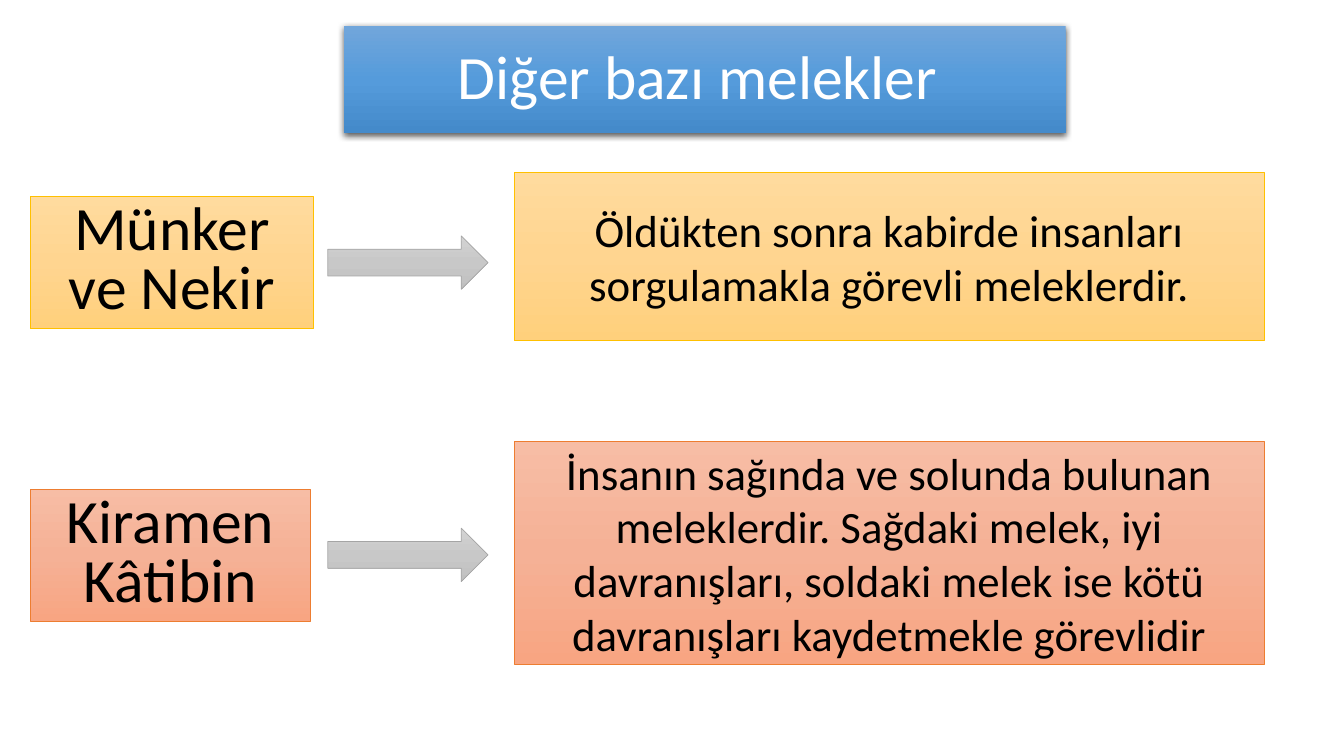
"""Builds a slide that pairs two groups of angels with their duties."""
import dataclasses

import lxml.etree
import pptx
import pptx.dml.color
import pptx.enum.shapes
import pptx.enum.text
import pptx.oxml.ns
import pptx.shapes.autoshape
import pptx.util

SLIDE_WIDTH = pptx.util.Inches(13.33)
SLIDE_HEIGHT = pptx.util.Inches(7.5)
FONT = "Calibri"
COLORS = {
    "black": "000000",
    "white": "FFFFFF",
    "gold line": "FFC000",
    "orange line": "ED7D31",
    "gray line": "A5A5A5",
}
GRADIENTS = {
    "blue": ("71A6DB", "559BDB", "448ACA"),
    "gold": ("FFDB9E", "FFD590", "FFD07C"),
    "orange": ("F7BDA5", "F5B196", "F8A582"),
    "gray": ("D2D2D2", "C8C8C8", "C0C0C0"),
}
NAME_LEFT, NAME_HEIGHT = 2.25, 17.47
ARROW_LEFT, ARROW_WIDTH, ARROW_HEIGHT = 24.38, 11.93, 7.07
DUTY_LEFT, DUTY_WIDTH = 38.26, 55.81


@dataclasses.dataclass(frozen=True)
class Area:
    """Place and size as percentages of the slide."""
    left: float
    top: float
    width: float
    height: float


@dataclasses.dataclass(frozen=True)
class Angel:
    """One row: a name, an arrow and a duty."""
    name: str
    duty: str
    theme: str
    name_top: float
    name_width: float
    duty_top: float
    duty_height: float


ANGELS = (
    Angel("Münker ve Nekir",
          "Öldükten sonra kabirde insanları sorgulamakla görevli meleklerdir.",
          "gold", 26, 21.08, 22.8, 22.27),
    Angel("Kiramen Kâtibin",
          "İnsanın sağında ve solunda bulunan meleklerdir. Sağdaki melek, iyi "
          "davranışları, soldaki melek ise kötü davranışları kaydetmekle görevlidir",
          "orange", 64.67, 20.86, 58.4, 29.47),
)


def add_element(parent: lxml.etree._Element, tag: str, **attributes: str) -> lxml.etree._Element:
    """Append a drawing element to its parent."""
    return lxml.etree.SubElement(parent, pptx.oxml.ns.qn(tag), attributes)


def place(box: pptx.shapes.autoshape.Shape, area: Area) -> None:
    """Move and size a box by shares of the slide."""
    box.left = round(SLIDE_WIDTH * area.left / 100)
    box.top = round(SLIDE_HEIGHT * area.top / 100)
    box.width = round(SLIDE_WIDTH * area.width / 100)
    box.height = round(SLIDE_HEIGHT * area.height / 100)


def paint(box: pptx.shapes.autoshape.Shape, theme: str, outlined: bool = True) -> None:
    """Give a box a vertical three-stop gradient and a thin outline."""
    box.fill.gradient()
    box.fill.gradient_angle = 270
    stops = box._element.spPr.find(".//" + pptx.oxml.ns.qn("a:gsLst"))
    for stop in list(stops):
        stops.remove(stop)
    for index, color in enumerate(GRADIENTS[theme]):
        stop = add_element(stops, "a:gs", pos=str(index * 50000))
        add_element(stop, "a:srgbClr", val=color)
    if outlined:
        box.line.color.rgb = pptx.dml.color.RGBColor.from_string(COLORS[f"{theme} line"])
        box.line.width = pptx.util.Pt(0.5)
    else:
        box.line.fill.background()
    box.shadow.inherit = False


def cast_shadow(box: pptx.shapes.autoshape.Shape) -> None:
    """Add a soft shadow below a box."""
    effects = box._element.spPr.find(pptx.oxml.ns.qn("a:effectLst"))
    shadow = add_element(effects, "a:outerShdw", blurRad="57150", dist="19050",
                         dir="5400000", algn="ctr", rotWithShape="0")
    color = add_element(shadow, "a:srgbClr", val=COLORS["black"])
    add_element(color, "a:alpha", val="63000")


def write(box: pptx.shapes.autoshape.Shape, text: str, *, size: float,
          color: str = "black", spacing: float = 1.0, before: float = 0) -> None:
    """Write one centred paragraph without a bullet."""
    frame = box.text_frame
    frame.word_wrap = True
    frame.auto_size = pptx.enum.text.MSO_AUTO_SIZE.NONE
    frame.vertical_anchor = pptx.enum.text.MSO_ANCHOR.MIDDLE
    para = frame.paragraphs[0]
    para.alignment = pptx.enum.text.PP_ALIGN.CENTER
    para.line_spacing = spacing
    para.space_before = pptx.util.Pt(before)
    properties = para._p.get_or_add_pPr()
    properties.set("marL", "0")
    properties.set("indent", "0")
    add_element(properties, "a:buNone")
    span = para.add_run()
    span.text = text
    span.font.name = FONT
    span.font.size = pptx.util.Pt(size)
    span.font.color.rgb = pptx.dml.color.RGBColor.from_string(COLORS[color])


def main() -> None:
    """Build and save the slide."""
    deck = pptx.Presentation()
    deck.slide_width, deck.slide_height = SLIDE_WIDTH, SLIDE_HEIGHT
    page = deck.slides.add_slide(deck.slide_layouts[1])
    kinds = pptx.enum.shapes.MSO_SHAPE

    def add_box(kind: pptx.enum.shapes.MSO_SHAPE) -> pptx.shapes.autoshape.Shape:
        return page.shapes.add_shape(kind, 0, 0, 0, 0)

    title = page.shapes.title
    place(title, Area(25.58, 3.47, 53.71, 14.13))
    paint(title, "blue", outlined=False)
    cast_shadow(title)
    write(title, "Diğer bazı melekler ", size=44, color="white", spacing=0.9)

    for index, angel in enumerate(ANGELS):
        name = page.placeholders[1] if index == 0 else add_box(kinds.RECTANGLE)
        place(name, Area(NAME_LEFT, angel.name_top, angel.name_width, NAME_HEIGHT))
        paint(name, angel.theme)
        write(name, angel.name, size=44, spacing=0.8, before=10)

        arrow = add_box(kinds.RIGHT_ARROW)
        arrow_top = angel.name_top + (NAME_HEIGHT - ARROW_HEIGHT) / 2
        place(arrow, Area(ARROW_LEFT, arrow_top, ARROW_WIDTH, ARROW_HEIGHT))
        paint(arrow, "gray")

        duty = add_box(kinds.RECTANGLE)
        place(duty, Area(DUTY_LEFT, angel.duty_top, DUTY_WIDTH, angel.duty_height))
        paint(duty, angel.theme)
        write(duty, angel.duty, size=32)

    deck.save("out.pptx")


if __name__ == "__main__":
    main()
